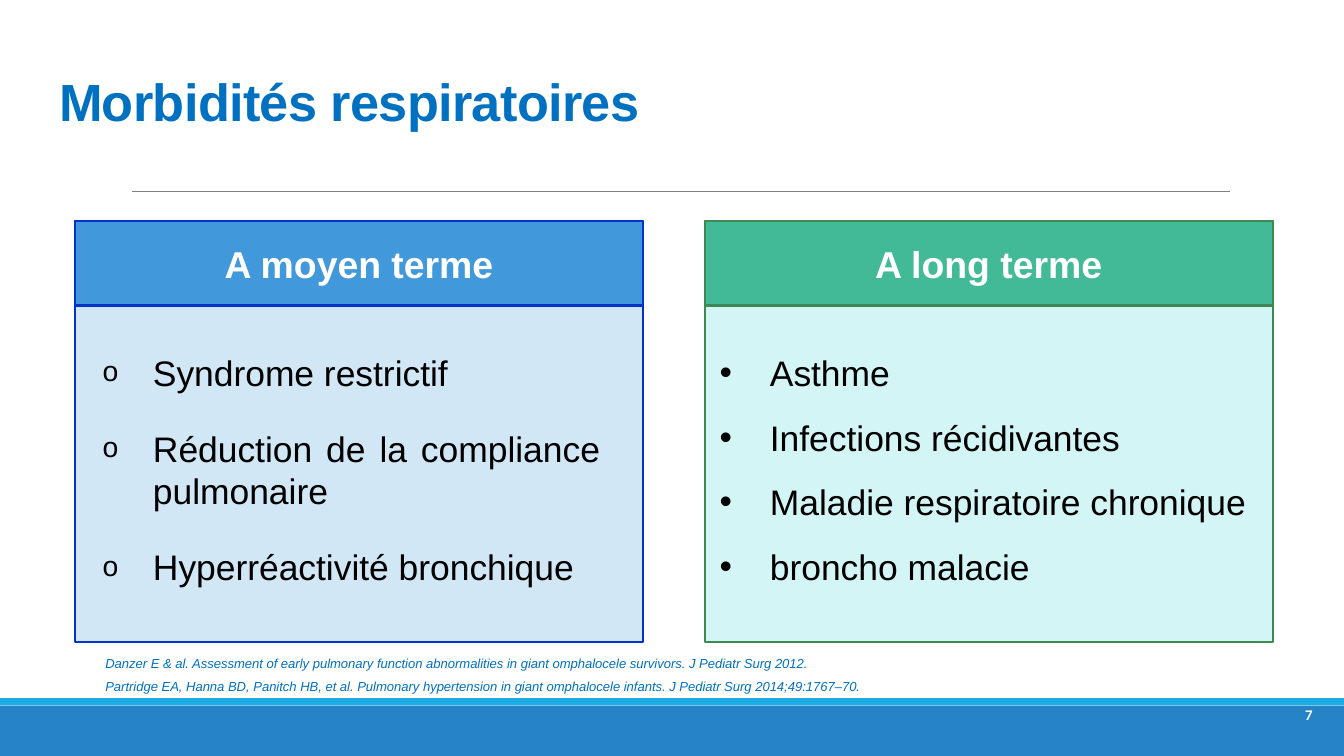
from lxml.etree import SubElement
from pptx import Presentation
from pptx.dml.color import RGBColor
from pptx.enum.shapes import MSO_CONNECTOR, MSO_SHAPE
from pptx.enum.text import MSO_ANCHOR, PP_ALIGN
from pptx.oxml.ns import qn
from pptx.util import Emu, Pt

EMU_PER_PX = 4572  # 200 px to the inch
SLIDE_WIDTH, SLIDE_HEIGHT = 2000, 1125
CARD_TOP, CARD_WIDTH, CARD_HEIGHT, BAND_HEIGHT = 329, 845, 626, 126
BLUE = "0070C0"
WHITE = "FFFFFF"


def px(length):
    return Emu(length * EMU_PER_PX)


def rgb(color):
    return RGBColor.from_string(color)


def write(frame, lines, size, color, font="Arial", bold=False, italic=False,
          align=PP_ALIGN.LEFT, anchor=MSO_ANCHOR.TOP, margins=(20, 10),
          line_spacing=None, space_after=(), tracking=None,
          indent=0, bullet=None, bullet_size=100):
    """Fill a text frame, one paragraph a line; space_after lists points."""
    frame.word_wrap = True
    frame.vertical_anchor = anchor
    frame.margin_left = frame.margin_right = px(margins[0])
    frame.margin_top = frame.margin_bottom = px(margins[1])
    for index, line in enumerate(lines):
        paragraph = frame.add_paragraph() if index else frame.paragraphs[0]
        paragraph.alignment = align
        paragraph.space_before = Pt(0)
        paragraph.space_after = Pt(space_after[index] if space_after else 0)
        if line_spacing:
            paragraph.line_spacing = line_spacing
        run = paragraph.add_run()
        run.text = line
        run.font.name = font
        run.font.size = Pt(size)
        run.font.bold = bold
        run.font.italic = italic
        run.font.color.rgb = rgb(color)
        if tracking:
            run.font._element.set("spc", str(tracking))
        properties = paragraph._p.get_or_add_pPr()
        properties.set("marL", str(px(indent)))
        if bullet:
            properties.set("indent", str(-px(indent)))
            SubElement(properties, qn("a:buSzPct"), val=str(bullet_size * 1000))
            SubElement(properties, qn("a:buFont"), typeface=font)
            SubElement(properties, qn("a:buChar"), char=bullet)


class SlideBuilder:
    def __init__(self, presentation):
        self.slide = presentation.slides.add_slide(presentation.slide_layouts[5])
        self.shapes = self.slide.shapes

    def title(self, text, left, top, width, height):
        title = self.shapes.title
        title.left, title.top = px(left), px(top)
        title.width, title.height = px(width), px(height)
        write(title.text_frame, [text], 28, BLUE, bold=True, margins=(20, 20),
              line_spacing=0.85, tracking=-35)

    def box(self, left, top, width, height, fill, line=None, line_width=1):
        box = self.shapes.add_shape(MSO_SHAPE.RECTANGLE, px(left), px(top),
                                    px(width), px(height))
        box.shadow.inherit = False
        box.fill.solid()
        box.fill.fore_color.rgb = rgb(fill)
        if line:
            box.line.color.rgb = rgb(line)
            box.line.width = Pt(line_width)
        else:
            box.line.fill.background()
        return box

    def rule(self, left, right, y, color):
        rule = self.shapes.add_connector(MSO_CONNECTOR.STRAIGHT, px(left), px(y),
                                         px(right), px(y))
        rule.line.color.rgb = rgb(color)
        rule.line.width = Pt(0.5)
        SubElement(rule._element.spPr, qn("a:effectLst"))

    def text(self, lines, left, top, width, height, **style):
        box = self.shapes.add_textbox(px(left), px(top), px(width), px(height))
        write(box.text_frame, lines, **style)

    def card(self, heading, left, body, header, border):
        self.box(left, CARD_TOP, CARD_WIDTH, CARD_HEIGHT, body, border)
        band = self.box(left, CARD_TOP, CARD_WIDTH, BAND_HEIGHT, header, border, 1.25)
        write(band.text_frame, [heading], 20, WHITE, bold=True,
              align=PP_ALIGN.CENTER, anchor=MSO_ANCHOR.MIDDLE)

    def bullets(self, items, left, width, **style):
        self.text(items, left, 512, width, 376, size=19, color="000000",
                  align=PP_ALIGN.JUSTIFY, indent=75, **style)


def main():
    presentation = Presentation()
    presentation.slide_width = px(SLIDE_WIDTH)
    presentation.slide_height = px(SLIDE_HEIGHT)
    page = SlideBuilder(presentation)

    page.box(0, 1050, SLIDE_WIDTH, 75, "2683C6")
    page.box(0, 1039, SLIDE_WIDTH, 11, "1CADE4")
    page.rule(196, 1830, 285, "808080")
    page.title("Morbidités respiratoires", 68, 98, 1864, 126)
    page.text(["7"], 1853, 1021, 120, 86, size=7.9, color=WHITE, font="Calibri",
              bold=True, align=PP_ALIGN.RIGHT, anchor=MSO_ANCHOR.MIDDLE,
              margins=(20, 20))

    page.card("A moyen terme", 112, "D1E7F6", "4199DB", "0033CC")
    page.bullets(["Syndrome restrictif", "Réduction de la compliance pulmonaire",
                  "Hyperréactivité bronchique"], 133, 780,
                 space_after=(18, 18, 12), bullet="o", bullet_size=80)

    page.card("A long terme", 1049, "D3F5F6", "42BA97", "3E8853")
    page.bullets(["Asthme", "Infections récidivantes",
                  "Maladie respiratoire chronique", "broncho malacie"], 1051, 844,
                 space_after=(12,) * 4, bullet="•")

    page.text(["Danzer E & al. Assessment of early pulmonary function abnormalities "
               "in giant omphalocele survivors. J Pediatr Surg 2012.",
               "Partridge EA, Hanna BD, Panitch HB, et al. Pulmonary hypertension "
               "in giant omphalocele infants. J Pediatr Surg 2014;49:1767–70."],
              112, 966, 1776, 78, size=7, color=BLUE, italic=True, indent=25,
              space_after=(4, 0))

    presentation.save("out.pptx")


if __name__ == "__main__":
    main()
